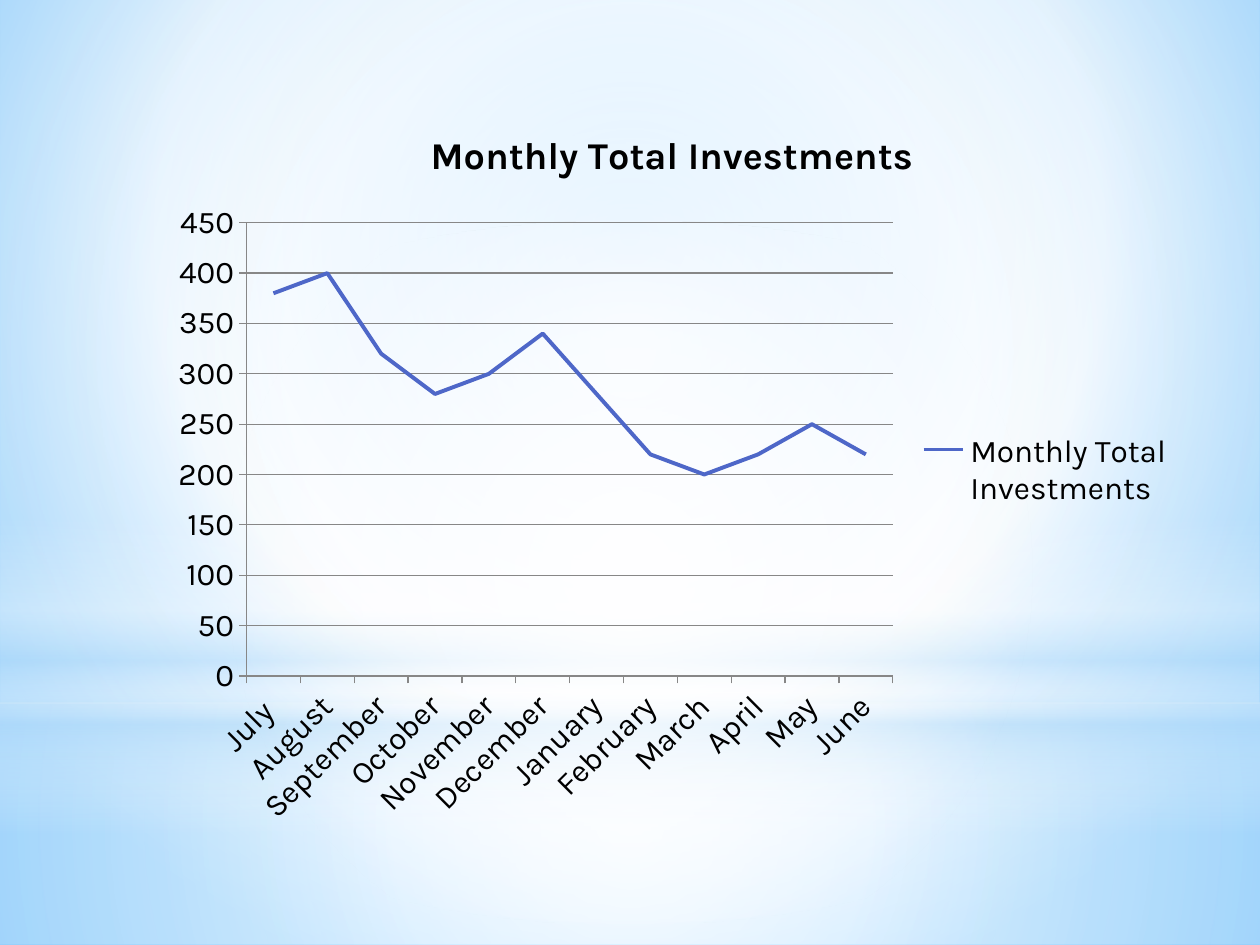
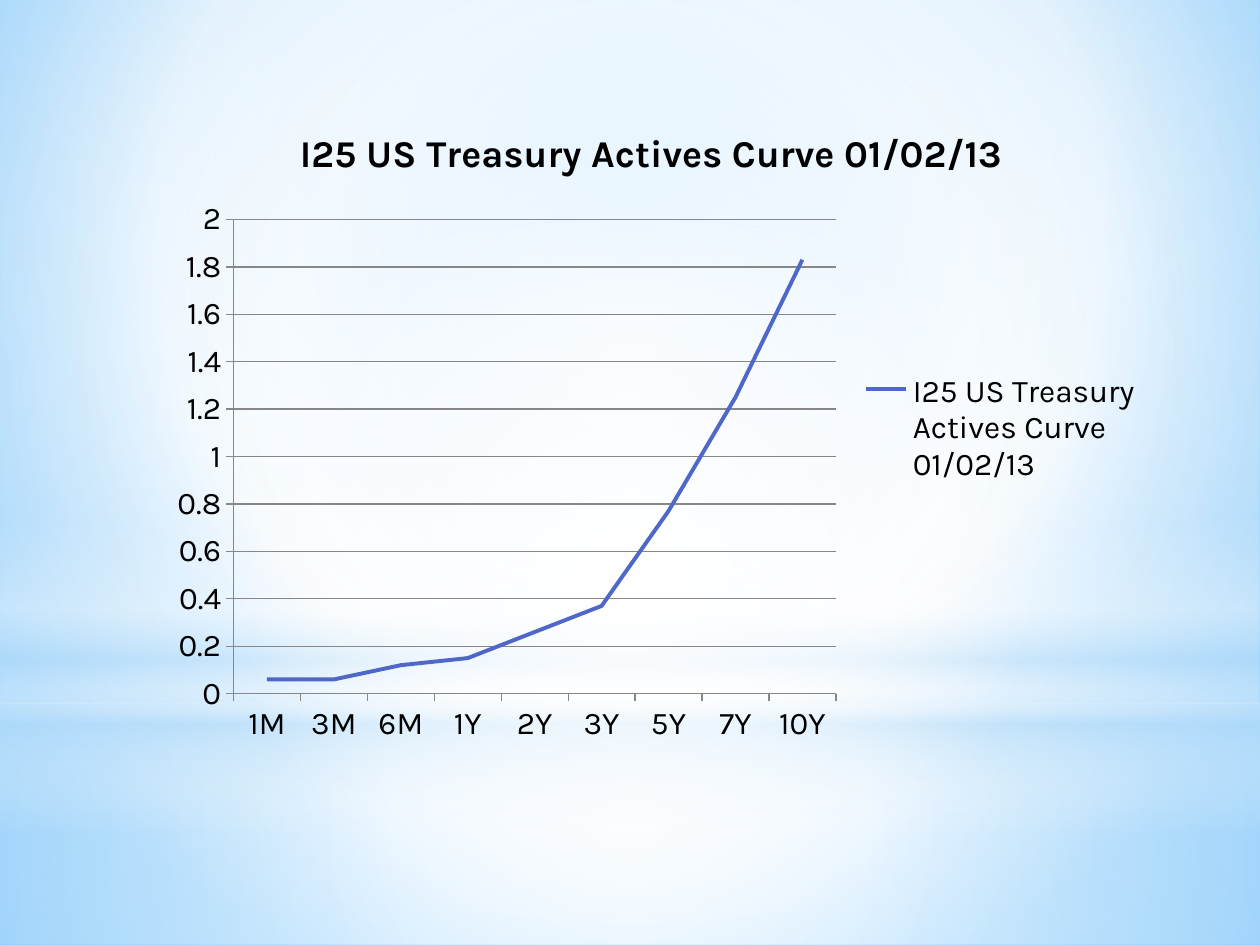
from lxml import etree
from pptx import Presentation
from pptx.chart.data import CategoryChartData as Data
from pptx.dml.color import RGBColor as Rgb
from pptx.enum.chart import XL_CHART_TYPE as Kind, XL_LEGEND_POSITION as Place, XL_TICK_MARK as Tick
from pptx.enum.shapes import MSO_SHAPE as Shape
from pptx.oxml.ns import qn
from pptx.util import Inches, Pt

HUES = {"white": "FFFFFF", "pale": "B4DCFA", "sky": "9ED5FF", "deep": "5BB9FF",
        "line": "4E67C8", "grid": "878787", "text": "000000"}
FONT = {"name": "Karla", "size": Pt(18), "bold": False}
HEAD = {**FONT, "size": Pt(21.6), "bold": True}
MID = (50, 50, 50, 50)
BACK = [(0, "sky", 100), (60, "white", 100), (100, "deep", 100)]
GLOWS = [
    (Shape.RECTANGLE, (0, 5.58, 10, 1.92), MID,
     [(0, "white", 91), (37, "white", 76), (100, "pale", 79)]),
    (Shape.RECTANGLE, (0, 0, 10, 5.58), MID,
     [(0, "white", 89), (48, "white", 62), (100, "pale", 79)]),
    (Shape.RECTANGLE, (0, 4.12, 10, 2.5), None,
     [(0, "white", 0), (29, "white", 30), (45, "pale", 40),
      (55, "white", 26), (65, "pale", 60), (100, "white", 0)]),
    (Shape.OVAL, (0, 1.75, 10, 5.58), MID, [(0, "white", 100), (56, "white", 0)]),
]
MONTHS = ["July ", "August", "September", "October", "November", "December",
          "January", "February", "March", "April", "May", "June"]
TERMS = ["1M", "3M", "6M", "1Y", "2Y", "3Y", "5Y", "7Y", "10Y"]
CHARTS = [
    ("Monthly Total Investments", (1.25, 0.8, 8.17, 5.87), MONTHS,
     [380, 400, 320, 280, 300, 340, 280, 220, 200, 220, 250, 220]),
    ("I25 US Treasury Actives Curve 01/02/13 ", (1.25, 0.8, 7.92, 5.2), TERMS,
     [0.06, 0.06, 0.12, 0.15, 0.26, 0.37, 0.77, 1.25, 1.83]),
]


def color(name):
    """Return a named colour."""
    return Rgb.from_string(HUES[name])


def node(root, tag, **attrs):
    """Add a drawing element with the given attributes."""
    return etree.SubElement(root, qn("a:" + tag), {k: str(v) for k, v in attrs.items()})


def blend(fill, root, stops, focus):
    """Fill with a gradient: round about a focus, or downward without one."""
    fill.solid()
    old = root.xpath(".//a:solidFill")[0]
    grad = etree.Element(qn("a:gradFill"), {"rotWithShape": "1"})
    group = node(grad, "gsLst")
    for pos, name, alpha in stops:
        tint = node(node(group, "gs", pos=pos * 1000), "srgbClr", val=HUES[name])
        if alpha < 100:
            node(tint, "alpha", val=alpha * 1000)
    if focus:
        sides = {k: v * 1000 for k, v in zip("ltrb", focus)}
        node(node(grad, "path", path="circle"), "fillToRect", **sides)
    else:
        node(grad, "lin", ang=90 * 60000, scaled=0)
    old.getparent().replace(old, grad)


def backdrop(master, slide):
    """Give the master its background and glows, shaped on a slide first."""
    blend(master.background.fill, master.element, BACK, (20, 10, 20, 60))
    for i, (kind, box, focus, stops) in enumerate(GLOWS):
        glow = slide.shapes.add_shape(kind, *map(Inches, box))
        glow.shadow.inherit = False
        blend(glow.fill, glow.element, stops, focus)
        glow.line.fill.background()
        master.shapes.element.insert(2 + i, glow.element)


def style(font, form):
    """Apply format values to a font."""
    for key, val in form.items():
        setattr(font, key, val)
    font.color.rgb = color("text")


def stroke(line, name, width):
    """Set the colour and width of a line."""
    line.color.rgb = color(name)
    line.width = Pt(width)


def graph(slide, title, box, cats, vals):
    """Draw a titled line chart in the box."""
    data = Data()
    data.categories = cats
    data.add_series(title, vals)
    chart = slide.shapes.add_chart(Kind.LINE, *map(Inches, box), data).chart
    style(chart.font, FONT)
    chart.has_title = chart.has_legend = True
    chart.chart_title.include_in_layout = False
    chart.chart_title.text_frame.text = title
    style(chart.chart_title.text_frame.paragraphs[0].runs[0].font, HEAD)
    chart.legend.position = Place.RIGHT
    chart.legend.include_in_layout = False
    for axis in (chart.category_axis, chart.value_axis):
        axis.major_tick_mark = Tick.OUTSIDE
        stroke(axis.format.line, "grid", 0.75)
    stroke(chart.value_axis.major_gridlines.format.line, "grid", 0.75)
    plot = chart.plots[0]
    plot.vary_by_categories = False
    plot.series[0].smooth = False
    stroke(plot.series[0].format.line, "line", 2.25)


def main():
    """Build and save the deck."""
    deck = Presentation()
    deck.slide_width, deck.slide_height = Inches(10), Inches(7.5)
    slides = [deck.slides.add_slide(deck.slide_layouts[6]) for _ in CHARTS]
    backdrop(deck.slide_master, slides[0])
    for slide, parts in zip(slides, CHARTS):
        graph(slide, *parts)
    deck.save("out.pptx")


if __name__ == "__main__":
    main()
